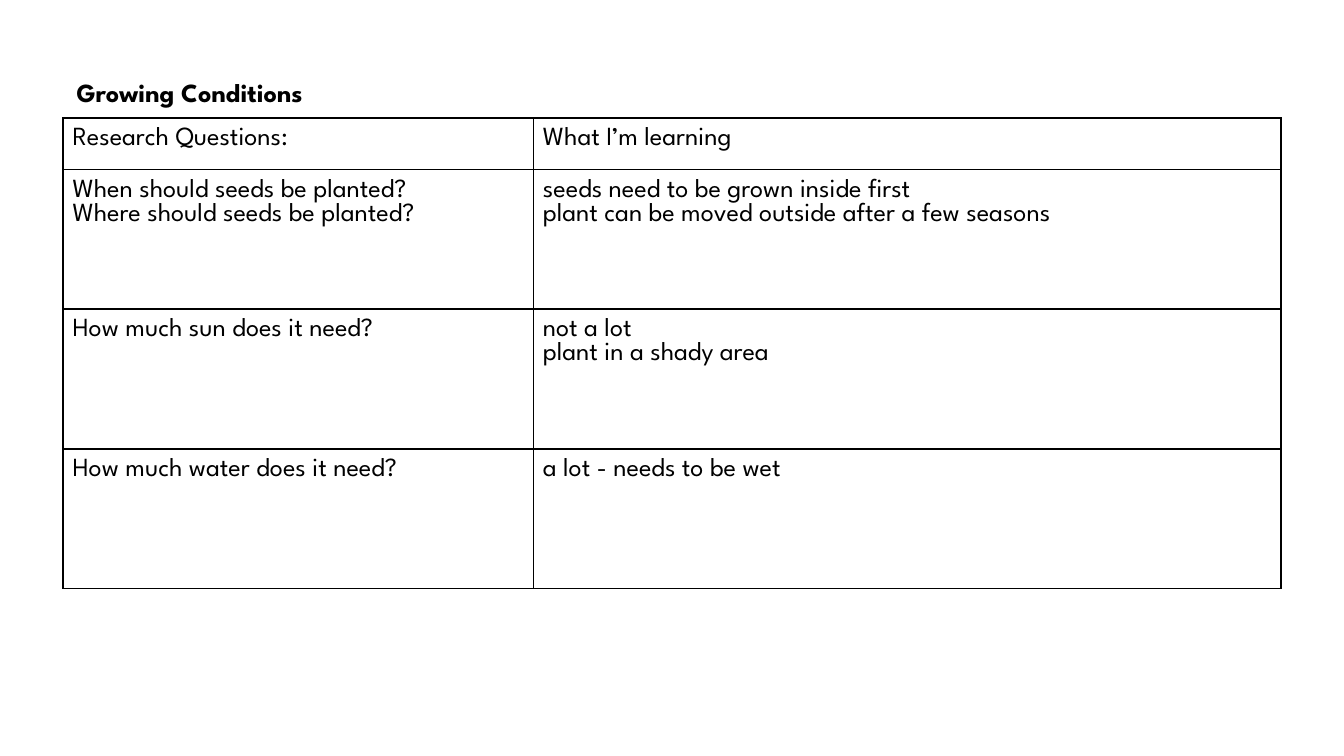
from dataclasses import dataclass

from lxml.etree import SubElement as Sub
from pptx import Presentation as Deck
from pptx.dml.color import RGBColor as Color
from pptx.enum.text import MSO_ANCHOR as Anchor, MSO_AUTO_SIZE as Fit, PP_ALIGN as Align
from pptx.oxml.ns import qn
from pptx.slide import Slide
from pptx.table import _Cell as Cell
from pptx.text.text import Font
from pptx.util import Inches, Pt

FACE = "League Spartan"
INK = "000000"
LEFT = 0.47
WIDTHS = (3.5, 5.56)


@dataclass
class Row:
    height: float
    ask: list[str]
    learn: list[str]


ROWS = [
    Row(0.38, ["Research Questions:"], ["What I’m learning"]),
    Row(
        1.04,
        ["When should seeds be planted?", "Where should seeds be planted?"],
        ["seeds need to be grown inside first",
         "plant can be moved outside after a few seasons"],
    ),
    Row(1.04, ["How much sun does it need?"], ["not a lot", "plant in a shady area"]),
    Row(1.04, ["How much water does it need?"], ["a lot - needs to be wet"]),
]


def style(font: Font, bold: bool = False) -> None:
    font.name = FACE
    font.size = Pt(14)
    font.bold = bold
    font.color.rgb = Color.from_string(INK)


def border(cell: Cell) -> None:
    props = cell._tc.get_or_add_tcPr()
    for side in ("lnL", "lnR", "lnT", "lnB"):
        line = Sub(props, qn(f"a:{side}"), w=str(Pt(1)))
        fill = Sub(line, qn("a:solidFill"))
        Sub(fill, qn("a:srgbClr"), val=INK)


def write(cell: Cell, lines: list[str]) -> None:
    cell.margin_left = cell.margin_right = Inches(0.07)
    cell.margin_top = cell.margin_bottom = Inches(0.07)
    cell.vertical_anchor = Anchor.TOP
    border(cell)
    cell.fill.background()
    cell.text = "\n".join(lines)
    for para in cell.text_frame.paragraphs:
        style(para.font)


def add_title(slide: Slide, text: str) -> None:
    title = slide.shapes.title
    title.left, title.top = Inches(LEFT), Inches(0.43)
    title.width, title.height = Inches(3.28), Inches(0.39)
    frame = title.text_frame
    frame.text = text
    frame.word_wrap = True
    frame.auto_size = Fit.NONE
    frame.vertical_anchor = Anchor.TOP
    frame.margin_left = frame.margin_right = Inches(0.1)
    frame.margin_top = frame.margin_bottom = Inches(0.1)
    para = frame.paragraphs[0]
    para.alignment = Align.LEFT
    para.line_spacing = 1.15
    style(para.font, bold=True)


def add_grid(slide: Slide, rows: list[Row]) -> None:
    height = sum(row.height for row in rows)
    table = slide.shapes.add_table(
        len(rows), len(WIDTHS), Inches(LEFT), Inches(0.88),
        Inches(sum(WIDTHS)), Inches(height),
    ).table
    table.first_row = table.horz_banding = False
    for col, width in zip(table.columns, WIDTHS):
        col.width = Inches(width)
    for line, row in zip(table.rows, rows):
        line.height = Inches(row.height)
        for cell, lines in zip(line.cells, (row.ask, row.learn)):
            write(cell, lines)


def main() -> None:
    deck = Deck()
    deck.slide_width, deck.slide_height = Inches(10), Inches(10 * 9 / 16)
    slide = deck.slides.add_slide(deck.slide_layouts[5])
    add_title(slide, "Growing Conditions")
    add_grid(slide, ROWS)
    deck.save("out.pptx")


if __name__ == "__main__":
    main()
